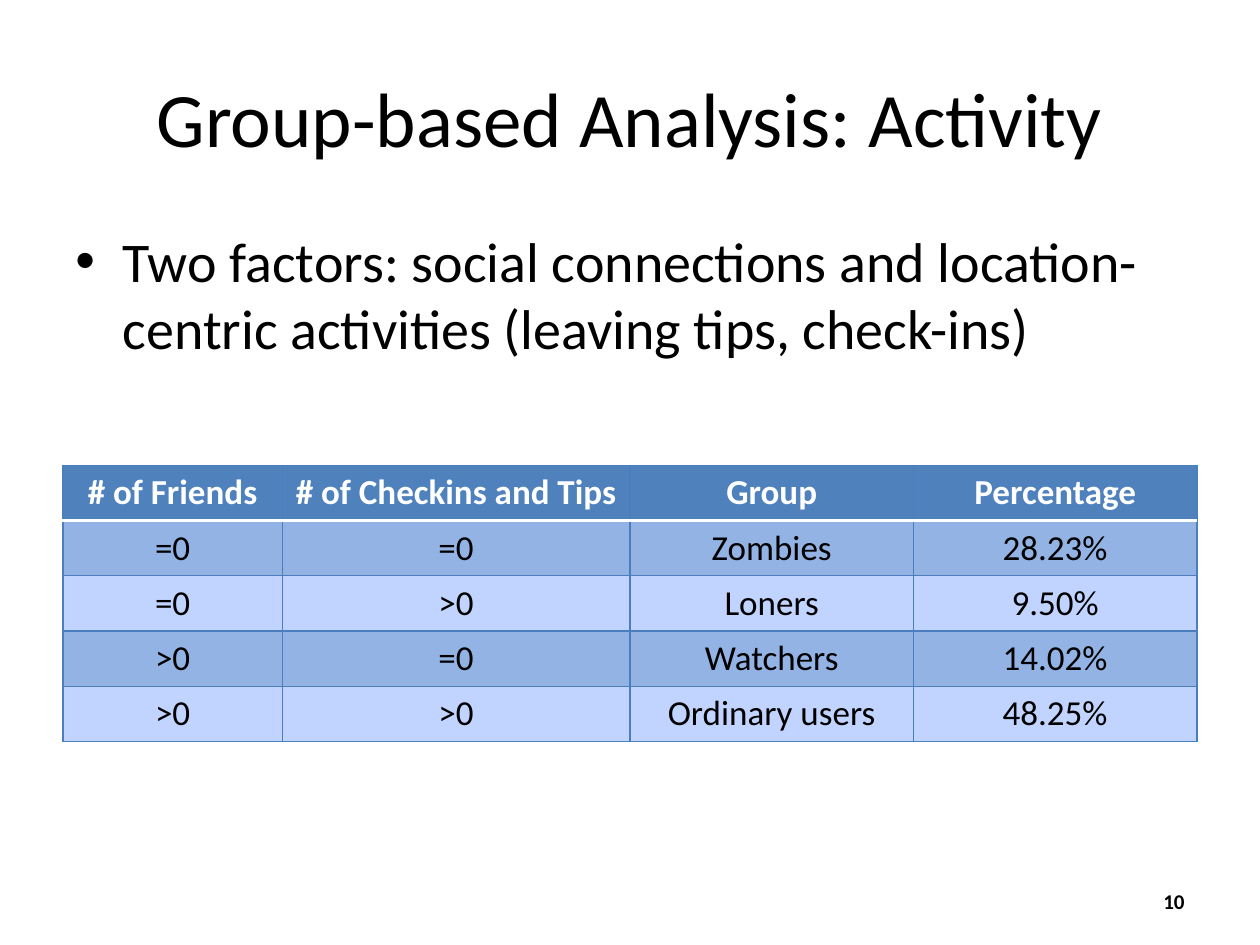
from lxml import etree
from pptx import Presentation
from pptx.dml.color import RGBColor
from pptx.enum.text import MSO_ANCHOR, PP_ALIGN
from pptx.oxml.ns import qn
from pptx.util import Pt

CENTER, LEFT, RIGHT = PP_ALIGN.CENTER, PP_ALIGN.LEFT, PP_ALIGN.RIGHT
MIDDLE, TOP = MSO_ANCHOR.MIDDLE, MSO_ANCHOR.TOP

BLACK = RGBColor(0x00, 0x00, 0x00)
WHITE = RGBColor(0xFF, 0xFF, 0xFF)
BLUE = RGBColor(0x4F, 0x81, 0xBD)
BAND = RGBColor(0x93, 0xB3, 0xE5)
PALE = RGBColor(0xC0, 0xD4, 0xFF)
EDGE = RGBColor(0x4B, 0x7E, 0xBC)

WIDTHS = (125.28, 198.72, 162, 162)
ROW = 31.6
ROWS = (
    ("# of Friends", "# of Checkins and Tips", "Group", "Percentage"),
    ("=0", "=0", "Zombies", "28.23%"),
    ("=0", ">0", "Loners", "9.50%"),
    (">0", "=0", "Watchers", "14.02%"),
    (">0", ">0", "Ordinary users", "48.25%"),
)


def write(frame, text, size=20, color=BLACK, bold=False, align=LEFT, anchor=TOP):
    frame.word_wrap = True
    frame.vertical_anchor = anchor
    para = frame.paragraphs[0]
    para.alignment = align
    run = para.add_run()
    run.text = text
    font = run.font
    font.name = "Calibri"
    font.size = Pt(size)
    font.bold = bold
    font.color.rgb = color
    return para


def add_text(slide, text, left, top, width, height, **style):
    box = slide.shapes.add_textbox(Pt(left), Pt(top), Pt(width), Pt(height))
    return write(box.text_frame, text, **style)


def add_title(slide, text):
    title = slide.shapes.title
    title.left, title.top = Pt(36), Pt(21.6)
    title.width, title.height = Pt(648), Pt(90)
    write(title.text_frame, text, size=44, align=CENTER, anchor=MIDDLE)


def set_bullet(para, indent):
    props = para._p.get_or_add_pPr()
    props.set("marL", str(Pt(indent)))
    props.set("indent", str(-Pt(indent)))
    space = etree.SubElement(props, qn("a:spcBef"))
    etree.SubElement(space, qn("a:spcPct"), val="20000")
    etree.SubElement(props, qn("a:buFont"), typeface="Arial")
    etree.SubElement(props, qn("a:buChar"), char="•")


def set_edges(cell, edges):
    props = cell._tc.get_or_add_tcPr()
    for spot, (side, (color, width)) in enumerate(edges.items()):
        line = etree.Element(qn(f"a:ln{side}"), w=str(Pt(width)))
        fill = etree.SubElement(line, qn("a:solidFill"))
        etree.SubElement(fill, qn("a:srgbClr"), val=str(color))
        props.insert(spot, line)


def add_grid(slide, left, top):
    shape = slide.shapes.add_table(
        len(ROWS), len(WIDTHS), Pt(left), Pt(top), Pt(sum(WIDTHS)), Pt(ROW * len(ROWS))
    )
    table = shape.table
    for col, width in zip(table.columns, WIDTHS):
        col.width = Pt(width)
    for r, texts in enumerate(ROWS):
        table.rows[r].height = Pt(ROW)
        head = r == 0
        edges = dict.fromkeys("LRTB", (EDGE, 0.75))
        if r < 2:
            edges["B" if head else "T"] = (WHITE, 2)
        for c, text in enumerate(texts):
            cell = table.cell(r, c)
            cell.fill.solid()
            cell.fill.fore_color.rgb = BLUE if head else BAND if r % 2 else PALE
            set_edges(cell, edges)
            write(cell.text_frame, text, color=WHITE if head else BLACK,
                  bold=head, align=CENTER)


def main():
    deck = Presentation()
    deck.slide_width, deck.slide_height = Pt(720), Pt(540)
    slide = deck.slides.add_slide(deck.slide_layouts[5])
    add_title(slide, "Group-based Analysis: Activity")
    para = add_text(
        slide,
        "Two factors: social connections and location-centric activities "
        "(leaving tips, check-ins)",
        36, 126, 648, 356.4, size=32,
    )
    set_bullet(para, 27)
    add_grid(slide, 36, 265.8)
    add_text(slide, "10", 516.24, 500.4, 167.76, 28.8, size=12, bold=True,
             align=RIGHT, anchor=MIDDLE)
    deck.save("out.pptx")


if __name__ == "__main__":
    main()
